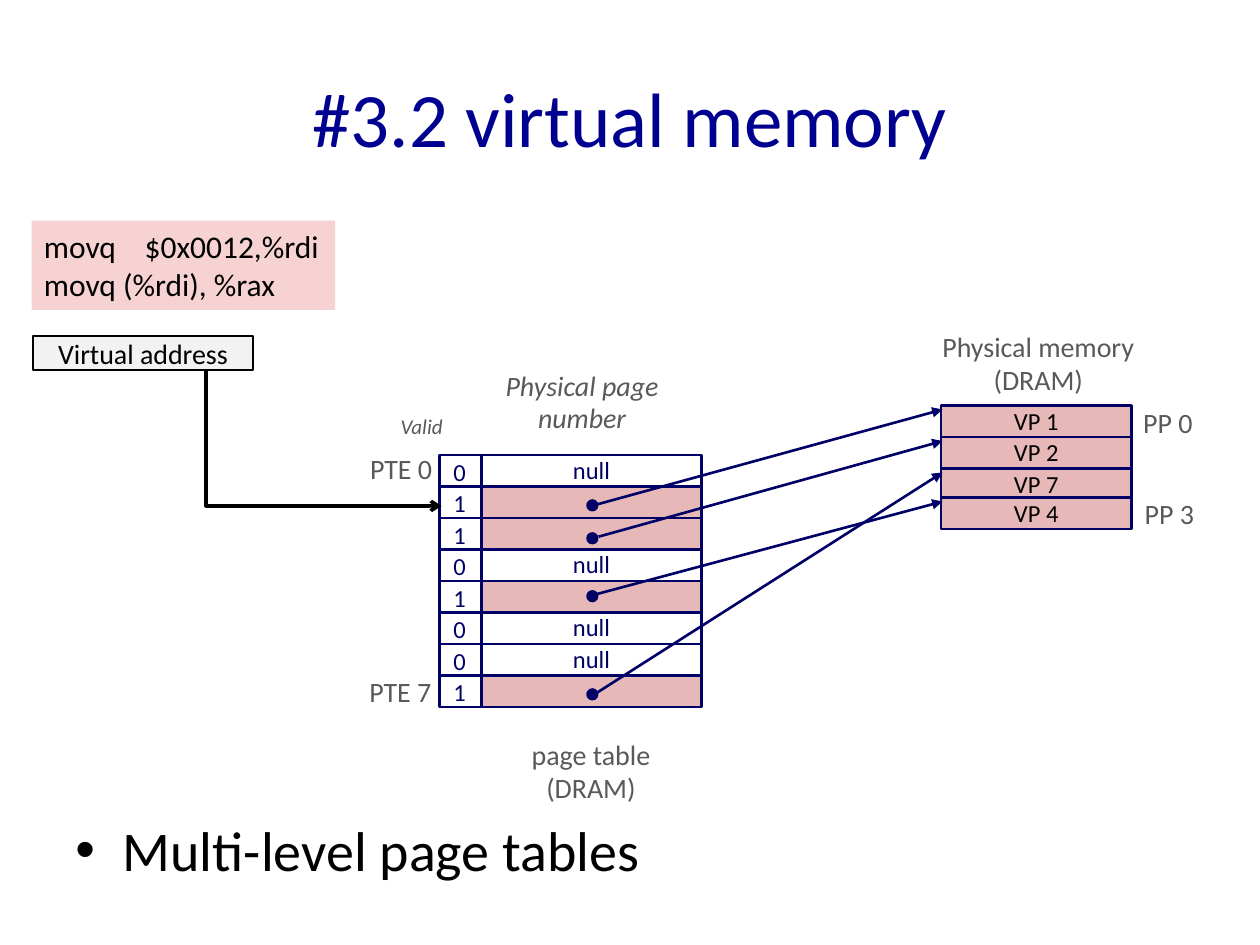
from dataclasses import dataclass

from lxml import etree
from pptx import Presentation
from pptx import util as u
from pptx.dml.color import RGBColor
from pptx.enum import shapes, text
from pptx.oxml.ns import qn

NAVY, GREY, BLACK = "000066", "595959", "000000"
ROSE, WHITE = "E6B9B8", "FFFFFF"
LEFT, MID, RIGHT = text.PP_ALIGN.LEFT, text.PP_ALIGN.CENTER, text.PP_ALIGN.RIGHT
RECT, OVAL = shapes.MSO_SHAPE.RECTANGLE, shapes.MSO_SHAPE.OVAL


@dataclass
class Label:
    words: str
    x: float
    y: float
    w: float
    h: float
    size: float = 16
    hue: str = GREY
    align: text.PP_ALIGN = MID
    middle: bool = False
    slant: bool = False
    wrap: bool = False
    grow: bool = True
    lead: float = 0.98


@dataclass
class Link:
    x: float
    y: float
    end: float  # height at which the arrow meets physical memory


@dataclass
class Page:
    name: str
    y: float


def tint(hue: str) -> RGBColor:
    return RGBColor.from_string(hue)


def write(shape, lab: Label) -> None:
    frame = shape.text_frame
    frame.text = lab.words
    frame.word_wrap = lab.wrap
    frame.auto_size = (text.MSO_AUTO_SIZE.SHAPE_TO_FIT_TEXT if lab.grow
                       else text.MSO_AUTO_SIZE.NONE)
    frame.vertical_anchor = (text.MSO_ANCHOR.MIDDLE if lab.middle
                             else text.MSO_ANCHOR.TOP)
    for para in frame.paragraphs:
        para.alignment = lab.align
        para.line_spacing = lab.lead
        for run in para.runs:
            font = run.font
            font.name, font.size = "Calibri", u.Pt(lab.size)
            font.italic = lab.slant
            font.color.rgb = tint(lab.hue)


def add_label(slide, lab: Label):
    box = slide.shapes.add_textbox(*map(u.Pt, (lab.x, lab.y, lab.w, lab.h)))
    write(box, lab)
    return box


def add_block(slide, kind, x: float, y: float, w: float, h: float,
              fill: str = "", line: str = NAVY, width: float = 1.5):
    block = slide.shapes.add_shape(kind, *map(u.Pt, (x, y, w, h)))
    block.shadow.inherit = False
    if fill:
        block.fill.solid()
        block.fill.fore_color.rgb = tint(fill)
    else:
        block.fill.background()
    if line:
        block.line.color.rgb = tint(line)
        block.line.width = u.Pt(width)
    else:
        block.line.fill.background()
    return block


def add_slot(slide, lab: Label, fill: str, line: str = NAVY, width: float = 1.5):
    block = add_block(slide, RECT, lab.x, lab.y, lab.w, lab.h, fill, line, width)
    write(block, lab)
    return block


def add_arrow(slide, kind, ends: tuple, hue: str, width: float, head: str):
    arrow = slide.shapes.add_connector(kind, *map(u.Pt, ends))
    arrow.line.color.rgb = tint(hue)
    arrow.line.width = u.Pt(width)
    etree.SubElement(arrow.line._get_or_add_ln(), qn("a:tailEnd"), type=head)
    etree.SubElement(arrow._element.spPr, qn("a:effectLst"))
    return arrow


def main() -> None:
    deck = Presentation()
    deck.slide_width, deck.slide_height = u.Pt(720), u.Pt(540)
    slide = deck.slides.add_slide(deck.slide_layouts[6])

    # Title
    add_label(slide, Label("#3.2 virtual memory", 36, 21.6, 648, 90, 44, "000090",
                           middle=True, wrap=True, grow=False, lead=1))

    # Page table: a valid bit and a page number in each row
    left, top, row, bit, wide = 251.3, 260, 18, 23.7, 126
    for i, valid in enumerate("01101001"):
        y = top + i * row
        cell = Label("" if valid == "1" else "null", left + bit, y, wide, row,
                     14, NAVY, middle=True, grow=False)
        add_slot(slide, cell, ROSE if valid == "1" else WHITE)
        add_block(slide, RECT, left, y, bit, row)
        add_label(slide, Label(valid, left + 0.7, y - 1.8, 22.3, 23.8,
                               14, NAVY, LEFT))

    # Physical memory
    for page in (Page("VP 1", 231.8), Page("VP 2", 249.8),
                 Page("VP 7", 267.8), Page("VP 4", 284.4)):
        add_slot(slide, Label(page.name, 537.8, page.y, 108.7, row, 14, BLACK,
                              middle=True, grow=False), ROSE)

    # Links from table rows to memory pages
    for link in (Link(337.7, 289.2, 234), Link(342, 306.7, 252),
                 Link(339.1, 340, 286.6), Link(339.8, 396.7, 270)):
        add_arrow(slide, shapes.MSO_CONNECTOR.STRAIGHT,
                  (link.x, link.y, 538.6, link.end), NAVY, 1.5, "triangle")
    for y in (285.8, 304.6, 337.7, 393.8):
        add_block(slide, OVAL, 335.5, y, 6, 6, NAVY, width=1)

    # Captions
    for lab in (
        Label("page table\n(DRAM)", 295.2, 419, 85, 45.4),
        Label("Physical memory\n(DRAM)", 529.2, 185.8, 128.2, 45.4),
        Label("Valid", 221.8, 233.3, 54, 21.6, 12, align=LEFT, slant=True, wrap=True),
        Label("Physical page\nnumber", 277.9, 207.4, 109.4, 45.4,
              middle=True, slant=True),
        Label("PTE 0", 203.6, 254.9, 50.4, 26.6, align=RIGHT, middle=True),
        Label("PTE 7", 203.2, 382.3, 50.4, 26.6, align=RIGHT, middle=True),
        Label("PP 0", 645.8, 229, 43.2, 26.6, middle=True),
        Label("PP 3", 646.6, 280.8, 43.2, 26.6, middle=True),
    ):
        add_label(slide, lab)

    # Virtual address and its bent arrow into the table
    add_slot(slide, Label("Virtual address", 18.7, 192.2, 126, 19.4, 16, BLACK,
                          middle=True, wrap=True, grow=False, lead=1),
             "F2F2F2", BLACK, 1)
    bend = add_arrow(slide, shapes.MSO_CONNECTOR.ELBOW,
                     (224, 182.9, 146.2, 317.5), BLACK, 2, "arrow")
    bend._element.spPr.find(qn("a:prstGeom")).set("prst", "bentConnector2")
    bend._element.spPr.find(qn("a:xfrm")).set("rot", str(270 * 60000))

    # Code, with a tab stop for the operand
    code = add_slot(slide, Label("movq\t$0x0012,%rdi\nmovq (%rdi), %rax",
                                 18, 126, 173.5, 51.1, 18, BLACK, LEFT, lead=1),
                    "F6D2D2", "")
    props = code.text_frame.paragraphs[0]._p.get_or_add_pPr()
    tabs = etree.SubElement(props, qn("a:tabLst"))
    etree.SubElement(tabs, qn("a:tab"), pos=str(u.Pt(57.6)), algn="l")

    # Bullet
    body = add_label(slide, Label("Multi-level page tables", 36, 462.2, 648, 63.4,
                                  32, BLACK, LEFT, wrap=True, grow=False, lead=1))
    para = body.text_frame.paragraphs[0]
    para.space_before = u.Pt(6.4)
    props = para._p.get_or_add_pPr()
    props.set("marL", str(u.Pt(27)))
    props.set("indent", str(u.Pt(-27)))
    etree.SubElement(props, qn("a:buFont"), typeface="Arial")
    etree.SubElement(props, qn("a:buChar"), char="•")

    deck.save("out.pptx")


if __name__ == "__main__":
    main()
